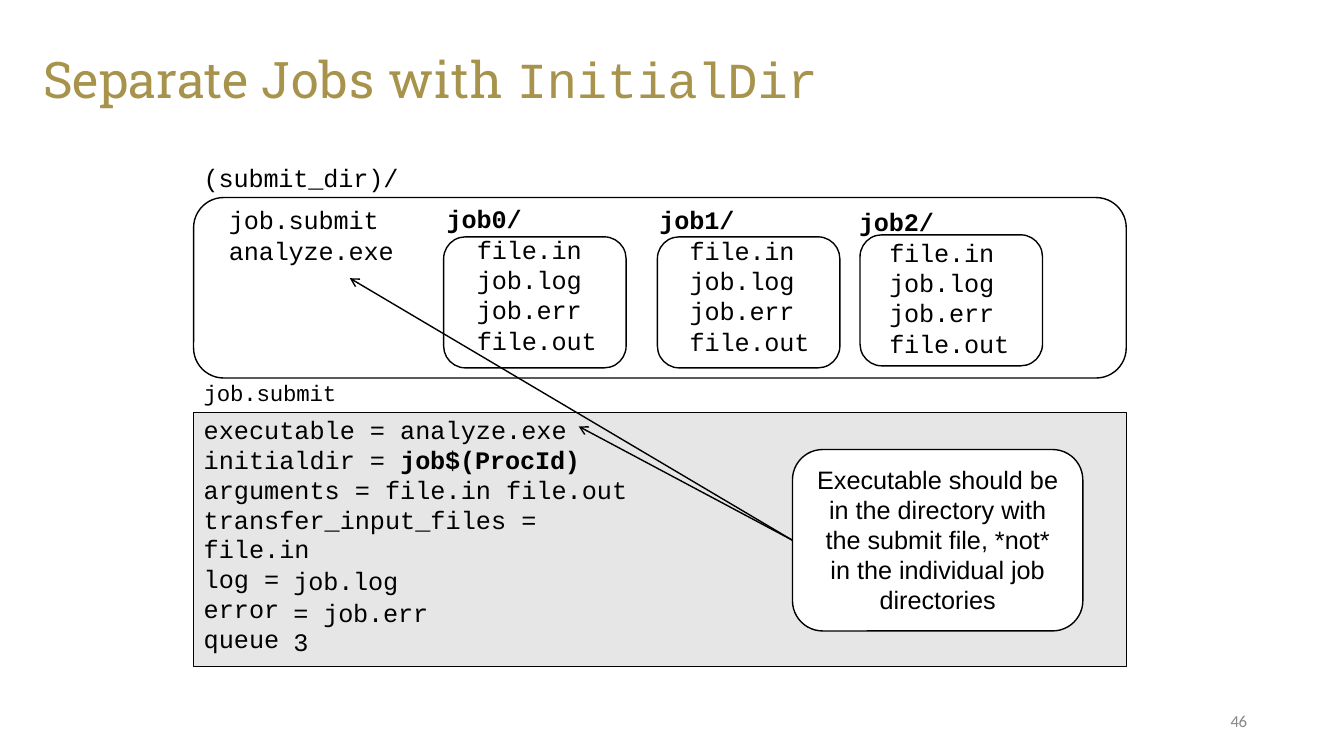
from pptx import Presentation
from pptx.dml.color import RGBColor
from pptx.enum.shapes import MSO_CONNECTOR, MSO_SHAPE as SHAPE
from pptx.enum.text import MSO_ANCHOR as ANCHOR, PP_ALIGN as ALIGN
from pptx.oxml.ns import qn
from pptx.util import Inches, Pt
from lxml import etree

BLACK = RGBColor(0x00, 0x00, 0x00)
WHITE = RGBColor(0xFF, 0xFF, 0xFF)
GOLD = RGBColor(0xA7, 0x93, 0x4B)
PANEL = RGBColor(0xE7, 0xE6, 0xE6)
GREY = RGBColor(0x89, 0x89, 0x89)
MONO = "Courier New"
JOB_FILES = ["file.in", "job.log", "job.err", "file.out"]


def add_run(p, text, font=MONO, size=18, color=BLACK, bold=False, spacing=0):
    r = p.add_run()
    r.text = text
    r.font.name, r.font.size, r.font.bold = font, Pt(size), bold
    r.font.color.rgb = color
    if spacing:
        r._r.get_or_add_rPr().set("spc", str(int(spacing * 100)))


def add_text(slide, left, top, width, height):
    """Add an empty text box without margins and return its text frame."""
    box = slide.shapes.add_textbox(Inches(left), Inches(top), Inches(width), Inches(height))
    tf = box.text_frame
    tf.margin_left = tf.margin_top = tf.margin_right = tf.margin_bottom = 0
    tf.word_wrap = True
    return tf


def next_paragraph(tf, line_spacing=None, before=0, indent=0):
    p = tf.add_paragraph()
    p.space_before = Pt(before)
    if line_spacing:
        p.line_spacing = line_spacing
    if indent:
        p._p.get_or_add_pPr().set("marL", str(Inches(indent)))
    return p


def add_box(slide, kind, left, top, width, height, fill=None, line=1):
    s = slide.shapes.add_shape(kind, Inches(left), Inches(top), Inches(width), Inches(height))
    s.shadow.inherit = False
    if fill is None:
        s.fill.background()
    else:
        s.fill.solid()
        s.fill.fore_color.rgb = fill
    s.line.color.rgb = BLACK
    s.line.width = Pt(line)
    return s


def add_title(slide, left, top, width, height):
    tf = add_text(slide, left, top, width, height)
    tf.vertical_anchor = ANCHOR.MIDDLE
    p = tf.paragraphs[0]
    for text, font, spacing in [("Separate ", "Roboto Slab", 0), ("Jobs ", "Roboto Slab", 0.7),
                                ("with ", "Roboto Slab", 0.6), ("InitialDir", MONO, -0.1)]:
        add_run(p, text, font, 36, GOLD, spacing=spacing)


def add_listing(slide, name, files, left, top, width, indent, before, line_spacing, bold=False):
    """Write a directory name and, indented below it, its files."""
    tf = add_text(slide, left, top, width, 1.5)
    add_run(tf.paragraphs[0], name, bold=bold, spacing=-0.1)
    for i, file in enumerate(files):
        p = next_paragraph(tf, line_spacing, before if i == 0 else 0, indent)
        add_run(p, file, spacing=-0.1)


def add_directory(slide, left, top, width, height):
    add_box(slide, SHAPE.ROUNDED_RECTANGLE, left, top, width, height)
    add_listing(slide, "(submit_dir)/", ["job.submit", "analyze.exe"],
                left + 0.1, top - 0.35, 2.3, 0.25, 7.9, 1.02)
    # Job folders: frame offset, then text offset
    jobs = [(2.48, 0.39, 2.51, 0.06), (4.6, 0.39, 4.62, 0.07), (6.61, 0.37, 6.6, 0.09)]
    for i, (x, y, text_x, text_y) in enumerate(jobs):
        add_box(slide, SHAPE.ROUNDED_RECTANGLE, left + x, top + y, 1.81, 1.3)
        add_listing(slide, f"job{i}/", JOB_FILES, left + text_x, top + text_y,
                    1.6, 0.3, 0.3, 1.0, bold=True)


def add_submit_file(slide, left, top, width, height):
    tf = add_text(slide, left + 0.1, top - 0.33, 2, 0.3)
    add_run(tf.paragraphs[0], "job.submit", size=16, spacing=-0.1)
    add_box(slide, SHAPE.RECTANGLE, left, top, width, height, PANEL, 0.75)

    # Commands
    tf = add_text(slide, left + 0.1, top + 0.03, 4.4, 2.4)
    lines = [("executable = analyze.exe", ""), ("initialdir = ", "job$(ProcId)"),
             ("arguments = file.in file.out", ""), ("transfer_input_files = file.in", ""),
             ("log =", ""), ("error", ""), ("queue", "")]
    for i, (plain, bold) in enumerate(lines):
        p = next_paragraph(tf) if i else tf.paragraphs[0]
        p.line_spacing = 0.99
        add_run(p, plain)
        if bold:
            add_run(p, bold, bold=True, spacing=-0.1)

    # Values set in a column of their own
    tf = add_text(slide, left + 0.99, top + 1.52, 1.6, 0.9)
    add_run(tf.paragraphs[0], "job.log", spacing=-0.1)
    add_run(next_paragraph(tf, Pt(20.9), 1.8), "= job.err", spacing=-0.1)
    add_run(next_paragraph(tf, Pt(20.9)), "3")


def add_arrow(slide, start, end):
    c = slide.shapes.add_connector(MSO_CONNECTOR.STRAIGHT, *map(Inches, start + end))
    c.line.color.rgb = BLACK
    c.line.width = Pt(1)
    etree.SubElement(c.line._get_or_add_ln(), qn("a:tailEnd"), type="arrow")
    etree.SubElement(c._element.spPr, qn("a:effectLst"))


def add_callout(slide, left, top, width, height, targets):
    s = add_box(slide, SHAPE.ROUNDED_RECTANGLE, left, top, width, height, WHITE)
    tf = s.text_frame
    tf.word_wrap = True
    tf.vertical_anchor = ANCHOR.MIDDLE
    tf.margin_left = tf.margin_right = Inches(0.14)
    p = tf.paragraphs[0]
    p.alignment = ALIGN.CENTER
    p.line_spacing = 0.99
    add_run(p, "Executable should be in the directory with the submit file, "
               "*not* in the individual job directories", "Arial")
    for target in targets:
        add_arrow(slide, (left, top + height / 2), target)


def add_page_number(slide, left, top, width, height):
    tf = add_text(slide, left, top, width, height)
    tf.vertical_anchor = ANCHOR.MIDDLE
    tf.paragraphs[0].alignment = ALIGN.RIGHT
    add_run(tf.paragraphs[0], "46", "Calibri", 12, GREY, spacing=-0.2)


def main():
    prs = Presentation()
    prs.slide_width, prs.slide_height = Inches(13.33), Inches(7.5)
    slide = prs.slides.add_slide(prs.slide_layouts[6])
    add_title(slide, 0.43, 0.22, 12.5, 1.11)
    add_directory(slide, 1.92, 1.96, 9.25, 1.79)
    add_submit_file(slide, 1.92, 4.09, 9.25, 2.52)
    add_callout(slide, 7.86, 4.46, 2.88, 1.8, [(3.47, 2.76), (5.74, 4.23)])
    add_page_number(slide, 12.02, 7.04, 0.35, 0.23)
    prs.save("out.pptx")


if __name__ == "__main__":
    main()
